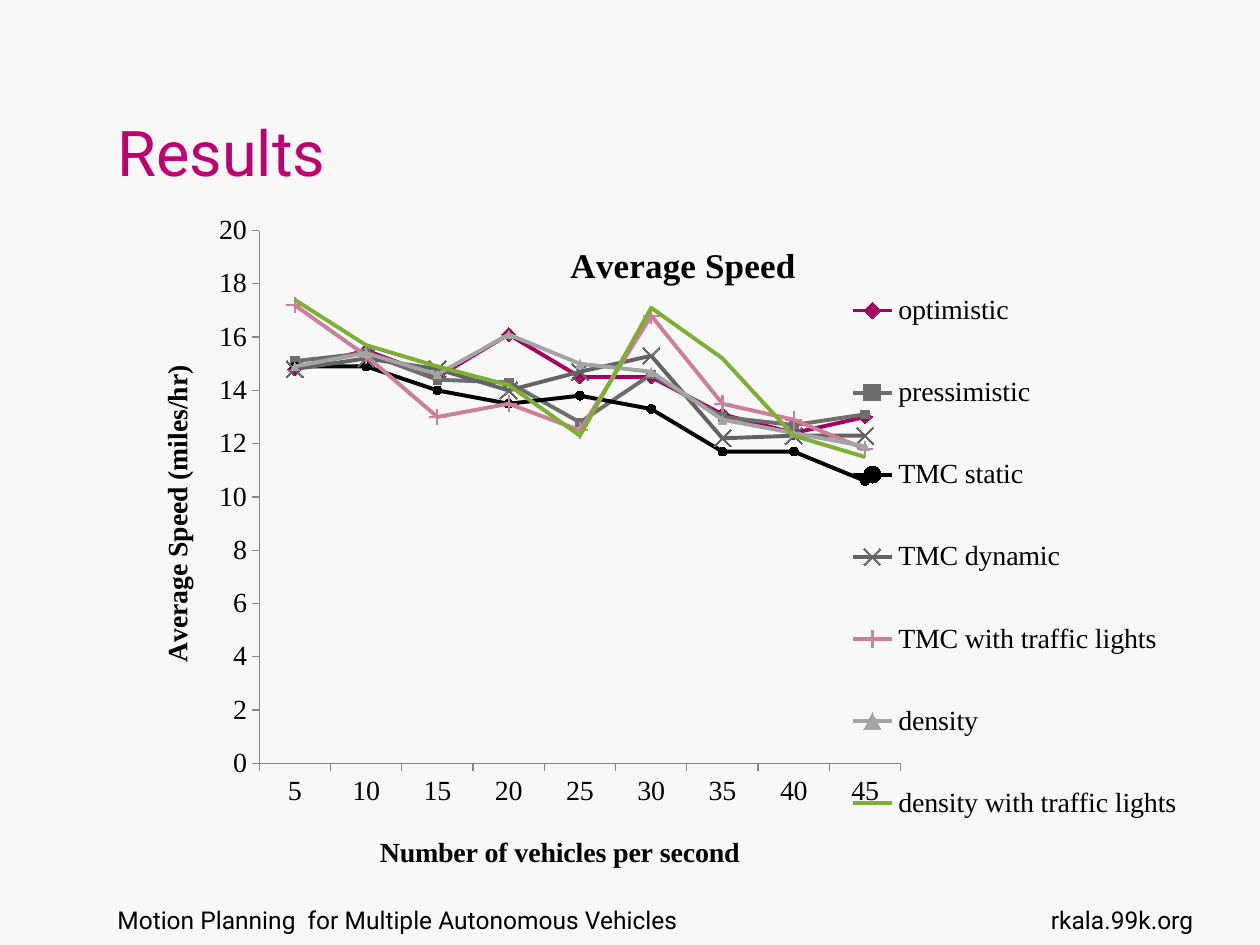
from dataclasses import dataclass

import pptx
import pptx.chart.data
import pptx.dml.color
import pptx.enum.chart
import pptx.enum.text
import pptx.oxml
import pptx.oxml.ns
import pptx.util

Pt = pptx.util.Pt
RGBColor = pptx.dml.color.RGBColor
Align = pptx.enum.text.PP_ALIGN
Anchor = pptx.enum.text.MSO_ANCHOR
Mark = pptx.enum.chart.XL_MARKER_STYLE
Tick = pptx.enum.chart.XL_TICK_MARK
qn = pptx.oxml.ns.qn

PAPER = RGBColor(0xF8, 0xF8, 0xF8)
BLACK = RGBColor(0, 0, 0)
PINK = RGBColor(0xBF, 0x00, 0x71)
WINE = RGBColor(0xA5, 0x00, 0x61)
ROSE = RGBColor(0xCB, 0x7F, 0x9B)
GRAY = RGBColor(0x6E, 0x6E, 0x6E)
DARK = RGBColor(0x63, 0x63, 0x63)
PALE = RGBColor(0xA4, 0xA4, 0xA4)
GREEN = RGBColor(0x7E, 0xAF, 0x35)
AXIS = RGBColor(0x86, 0x86, 0x86)
SANS = "Roboto"
SERIF = "Times New Roman"


@dataclass
class Label:
    text: str
    box: tuple[float, float, float, float]
    size: float = 14
    color: RGBColor = BLACK
    align: Align = Align.LEFT
    anchor: Anchor = Anchor.TOP


@dataclass
class Line:
    name: str
    color: RGBColor
    mark: Mark
    size: int
    vals: tuple[float, ...]


LABELS = [
    Label("Motion Planning  for Multiple Autonomous Vehicles", (60, 513.5, 499, 37.5)),
    Label("Results", (60, 21.6, 487.5, 90), 36, PINK, anchor=Anchor.BOTTOM),
    Label("rkala.99k.org", (581, 513.5, 108, 37.5), align=Align.RIGHT),
]
LINES = [
    Line("optimistic", WINE, Mark.DIAMOND, 8,
         (14.8, 15.5, 14.5, 16.1, 14.5, 14.5, 13.1, 12.4, 13)),
    Line("pressimistic", GRAY, Mark.SQUARE, 5,
         (15.1, 15.4, 14.4, 14.3, 12.8, 14.6, 13, 12.7, 13.1)),
    Line("TMC static", BLACK, Mark.CIRCLE, 5,
         (14.9, 14.9, 14, 13.5, 13.8, 13.3, 11.7, 11.7, 10.6)),
    Line("TMC dynamic", DARK, Mark.X, 10,
         (14.8, 15.2, 14.8, 14, 14.7, 15.3, 12.2, 12.3, 12.3)),
    Line("TMC with traffic lights", ROSE, Mark.PLUS, 9,
         (17.2, 15.3, 13, 13.5, 12.5, 16.8, 13.5, 12.9, 11.8)),
    Line("density", PALE, Mark.TRIANGLE, 5,
         (14.9, 15.4, 14.6, 16.1, 15, 14.7, 12.9, 12.4, 11.9)),
    Line("density with traffic lights", GREEN, Mark.NONE, 5,
         (17.4, 15.7, 14.9, 14.2, 12.3, 17.1, 15.2, 12.3, 11.5)),
]


def write(frame, text: str, *, size: float, font: str, color: RGBColor = BLACK,
          bold: bool = False, align: Align | None = None) -> None:
    para = frame.paragraphs[0]
    if align is not None:
        para.alignment = align
    run = para.add_run()
    run.text = text
    run.font.size = Pt(size)
    run.font.name = font
    run.font.bold = bold
    run.font.color.rgb = color


def label(slide, item: Label) -> None:
    frame = slide.shapes.add_textbox(*map(Pt, item.box)).text_frame
    frame.word_wrap = True
    frame.vertical_anchor = item.anchor
    write(frame, item.text, size=item.size, font=SANS, color=item.color, align=item.align)


def place(owner, index: int, **spots: float) -> None:
    for old in owner.findall(qn("c:layout")):
        owner.remove(old)
    modes = {"xMode": "edge", "yMode": "edge"}
    if index == 0:
        modes = {"layoutTarget": "inner", **modes}
    rows = "".join(f'<c:{key} val="{val}"/>' for key, val in {**modes, **spots}.items())
    space = pptx.oxml.ns.nsdecls("c")
    owner.insert(index, pptx.oxml.parse_xml(
        f"<c:layout {space}><c:manualLayout>{rows}</c:manualLayout></c:layout>"))


def style(series, line: Line) -> None:
    series.smooth = False
    series.format.line.color.rgb = line.color
    series.format.line.width = Pt(2.25)
    mark = series.marker
    mark.style = line.mark
    mark.size = line.size
    mark.format.line.color.rgb = line.color
    if line.mark in (Mark.X, Mark.PLUS):
        mark.format.fill.background()
    else:
        mark.format.fill.solid()
        mark.format.fill.fore_color.rgb = line.color


def axis(part, text: str, x: float, y: float) -> None:
    part.has_major_gridlines = False
    part.major_tick_mark = Tick.OUTSIDE
    part.minor_tick_mark = Tick.NONE
    part.format.line.color.rgb = AXIS
    write(part.axis_title.text_frame, text, size=16, font=SERIF, bold=True)
    place(part.axis_title._element, 1, x=x, y=y)


def graph(slide) -> None:
    data = pptx.chart.data.CategoryChartData()
    data.categories = [str(n) for n in range(5, 50, 5)]
    for line in LINES:
        data.add_series(line.name, line.vals)
    kind = pptx.enum.chart.XL_CHART_TYPE.LINE_MARKERS
    box = map(Pt, (82, 116.6, 601, 385))
    chart = slide.shapes.add_chart(kind, *box, data).chart
    chart.font.size = Pt(16)
    chart.font.name = SERIF
    chart.font.color.rgb = BLACK
    chart.plots[0].vary_by_categories = False
    for series, line in zip(chart.plots[0].series, LINES):
        style(series, line)

    chart.has_title = True
    title = chart.chart_title
    write(title.text_frame, "Average Speed", size=20, font=SERIF, bold=True)
    place(title._element, 1, x=0.4, y=0.05)
    title._element.find(qn("c:overlay")).set("val", "1")

    axis(chart.category_axis, "Number of vehicles per second", 0.22, 0.94)
    axis(chart.value_axis, "Average Speed (miles/hr)", 0.01, 0.24)
    chart.value_axis.minimum_scale = 0
    chart.value_axis.maximum_scale = 20
    chart.value_axis.major_unit = 2

    chart.has_legend = True
    chart.legend.position = pptx.enum.chart.XL_LEGEND_POSITION.RIGHT
    chart.legend.include_in_layout = False
    place(chart.legend._element, 1, x=0.68, y=0.06, w=0.31, h=0.94)
    area = chart._chartSpace.find(".//" + qn("c:plotArea"))
    place(area, 0, x=0.11, y=0.04, w=0.61, h=0.8)


def main() -> None:
    deck = pptx.Presentation()
    deck.slide_width, deck.slide_height = Pt(720), Pt(540)
    slide = deck.slides.add_slide(deck.slide_layouts[6])
    slide.background.fill.solid()
    slide.background.fill.fore_color.rgb = PAPER
    for item in LABELS:
        label(slide, item)
    graph(slide)
    deck.save("out.pptx")


if __name__ == "__main__":
    main()
